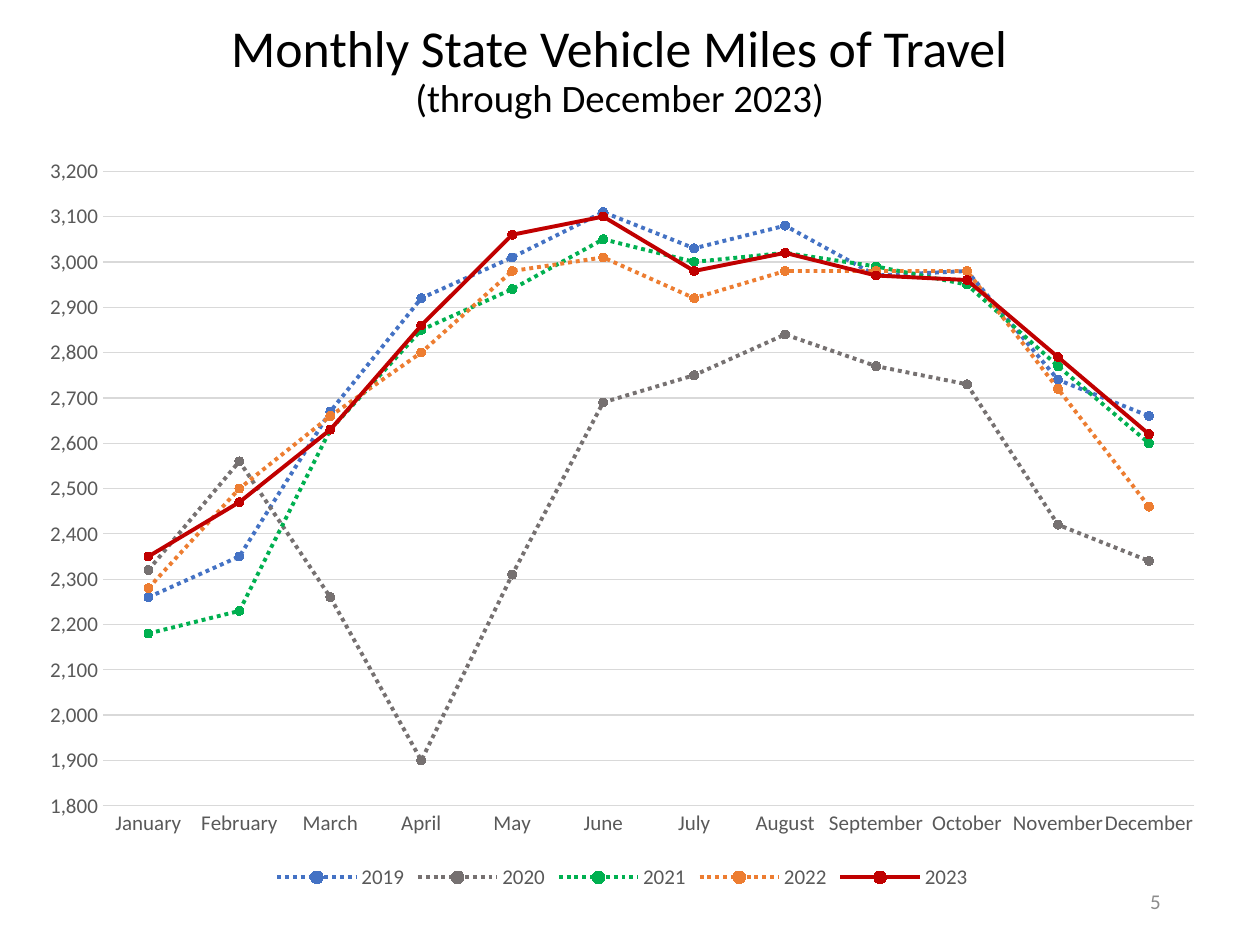
from pptx import Presentation
from pptx import util as u
from pptx.chart import data
from pptx.dml import color
from pptx.enum import chart as charts, dml, text

COLORS = {"title": "000000", "label": "595959", "grid": "D9D9D9", "number": "8C8C8C"}
MONTHS = ["January", "February", "March", "April", "May", "June", "July",
          "August", "September", "October", "November", "December"]
YEARS = {
    "2019": ("4472C4", [2260, 2350, 2670, 2920, 3010, 3110, 3030, 3080, 2970, 2980, 2740, 2660]),
    "2020": ("767171", [2320, 2560, 2260, 1900, 2310, 2690, 2750, 2840, 2770, 2730, 2420, 2340]),
    "2021": ("00B050", [2180, 2230, 2630, 2850, 2940, 3050, 3000, 3020, 2990, 2950, 2770, 2600]),
    "2022": ("ED7D31", [2280, 2500, 2660, 2800, 2980, 3010, 2920, 2980, 2980, 2980, 2720, 2460]),
    "2023": ("C00000", [2350, 2470, 2630, 2860, 3060, 3100, 2980, 3020, 2970, 2960, 2790, 2620]),
}


def apply(target, values):
    """Set each named attribute of the target."""
    for name, value in values.items():
        setattr(target, name, value)


def set_font(font, size, hex_color):
    """Format a font in Calibri."""
    apply(font, {"name": "Calibri", "size": u.Pt(size), "bold": False})
    font.color.rgb = color.RGBColor.from_string(hex_color)


def set_line(line, hex_color, width):
    """Give a line its colour and width."""
    line.color.rgb = color.RGBColor.from_string(hex_color)
    line.width = u.Pt(width)


def add_title(slide, left, top, width, height):
    """Fill the title placeholder with a heading and a smaller second line."""
    title = slide.shapes.title
    apply(title, {"left": left, "top": top, "width": width, "height": height})
    frame = title.text_frame
    apply(frame, {"auto_size": text.MSO_AUTO_SIZE.NONE, "word_wrap": True,
                  "vertical_anchor": text.MSO_ANCHOR.BOTTOM})
    frame.text = "Monthly State Vehicle Miles of Travel\n(through December 2023)"
    for paragraph, size in zip(frame.paragraphs, (29.6, 22.2)):
        apply(paragraph, {"alignment": text.PP_ALIGN.CENTER, "line_spacing": 0.9,
                          "space_before": u.Pt(0)})
        set_font(paragraph.runs[0].font, size, COLORS["title"])


def format_axes(chart):
    """Format the month axis and the miles axis."""
    for axis in (chart.category_axis, chart.value_axis):
        apply(axis, {"major_tick_mark": charts.XL_TICK_MARK.NONE,
                     "minor_tick_mark": charts.XL_TICK_MARK.NONE})
        set_font(axis.tick_labels.font, 12, COLORS["label"])
    set_line(chart.category_axis.format.line, COLORS["grid"], 0.75)
    miles = chart.value_axis
    apply(miles, {"minimum_scale": 1800, "maximum_scale": 3200, "major_unit": 100,
                  "has_major_gridlines": True})
    apply(miles.tick_labels, {"number_format": "#,##0", "number_format_is_linked": False})
    miles.format.line.fill.background()
    set_line(miles.major_gridlines.format.line, COLORS["grid"], 0.75)


def format_series(series, hex_color):
    """Colour one year, with dots for every year but the latest."""
    series.smooth = False
    set_line(series.format.line, hex_color, 2.25)
    if series.name != "2023":
        series.format.line.dash_style = dml.MSO_LINE.ROUND_DOT
    marker = series.marker
    apply(marker, {"style": charts.XL_MARKER_STYLE.CIRCLE, "size": 5})
    marker.format.fill.solid()
    marker.format.fill.fore_color.rgb = color.RGBColor.from_string(hex_color)
    set_line(marker.format.line, hex_color, 0.75)


def add_travel_chart(slide, left, top, width, height):
    """Draw one line for each year over the months."""
    chart_data = data.CategoryChartData(number_format="#,##0")
    chart_data.categories = MONTHS
    for year, (_, miles) in YEARS.items():
        chart_data.add_series(year, miles)
    chart = slide.shapes.add_chart(charts.XL_CHART_TYPE.LINE_MARKERS,
                                   left, top, width, height, chart_data).chart
    apply(chart, {"has_title": False, "has_legend": True})
    set_font(chart.font, 10, COLORS["title"])
    apply(chart.legend, {"position": charts.XL_LEGEND_POSITION.BOTTOM,
                         "include_in_layout": False})
    set_font(chart.legend.font, 12, COLORS["label"])
    format_axes(chart)
    plot = chart.plots[0]
    plot.vary_by_categories = False
    for series in plot.series:
        format_series(series, YEARS[series.name][0])


def add_slide_number(slide, left, top, width, height):
    """Write the page number at the right of its box."""
    frame = slide.shapes.add_textbox(left, top, width, height).text_frame
    apply(frame, {"word_wrap": True, "vertical_anchor": text.MSO_ANCHOR.MIDDLE})
    frame.text = "5"
    paragraph = frame.paragraphs[0]
    paragraph.alignment = text.PP_ALIGN.RIGHT
    set_font(paragraph.runs[0].font, 12, COLORS["number"])


def main():
    """Build and save the slide."""
    presentation = Presentation()
    apply(presentation, {"slide_width": u.Cm(25.4), "slide_height": u.Cm(19.05)})
    slide = presentation.slides.add_slide(presentation.slide_layouts[5])
    regions = {
        add_travel_chart: (0.53, 2.9, 24.03, 15.14),
        add_slide_number: (17.93, 17.65, 5.72, 1.02),
        add_title: (1.55, 0.2, 21.89, 2.36),
    }
    for add_region, box in regions.items():
        add_region(slide, *map(u.Cm, box))
    presentation.save("out.pptx")


if __name__ == "__main__":
    main()
